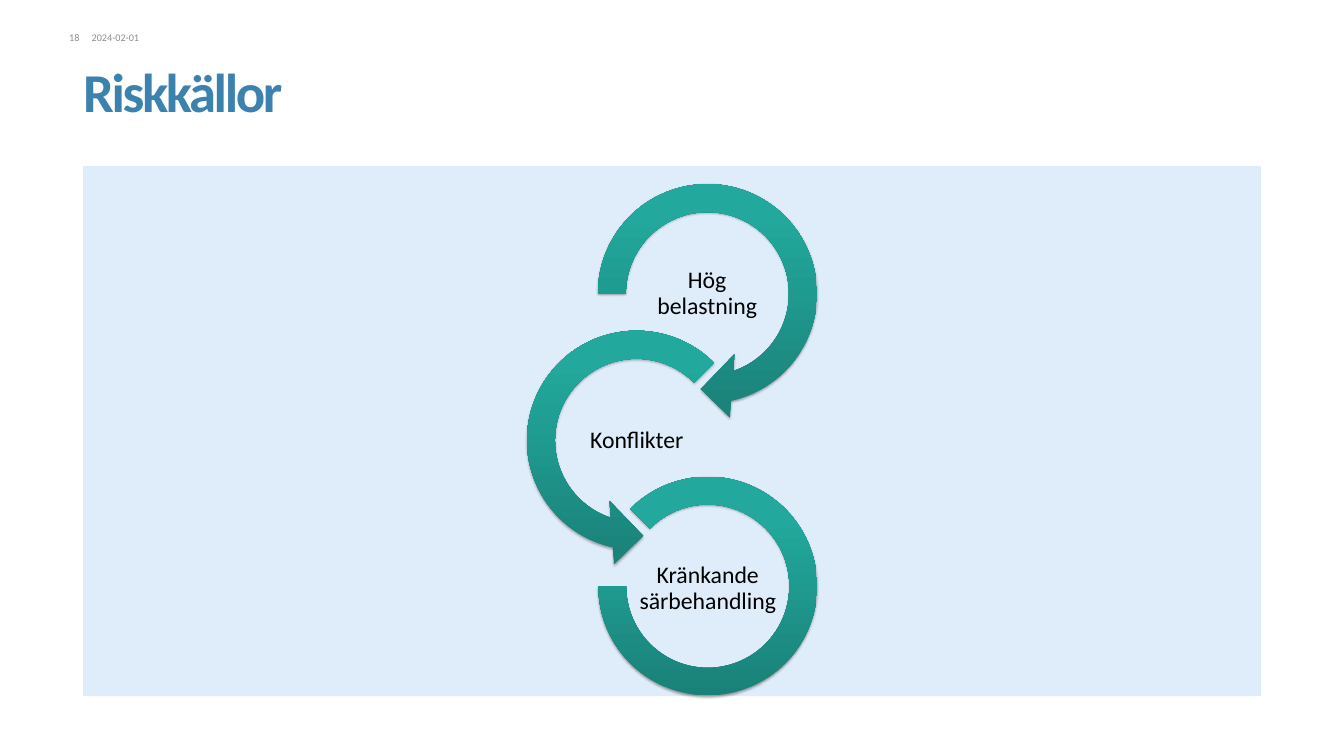
import copy
from dataclasses import dataclass

import pptx
import pptx.dml.color
import pptx.enum.shapes
import pptx.enum.text
import pptx.oxml
import pptx.oxml.ns
import pptx.util
from pptx.util import Inches

SHAPE = pptx.enum.shapes.MSO_SHAPE
ALIGN = pptx.enum.text.PP_ALIGN
ANCHOR = pptx.enum.text.MSO_ANCHOR
FONT = "Calibri"
GREY = "8C8C8C"
GRADIENT = ((0, "1A8178"), (0.8, "22A89C"), (1, "20AB9F"))
SHADOW_XML = (
    f'<a:outerShdw {pptx.oxml.ns.nsdecls("a")} blurRad="39370" dist="22860" '
    'dir="5400000" rotWithShape="0"><a:srgbClr val="000000">'
    '<a:alpha val="35000"/></a:srgbClr></a:outerShdw>'
)


@dataclass
class RiskSource:
    label: str
    label_left: float
    label_top: float
    preset: SHAPE
    left: float
    top: float
    size: float
    adjustments: tuple[float, ...]


RISK_SOURCES = (
    RiskSource("Hög belastning", 10.41, 4.23, SHAPE.CIRCULAR_ARROW,
               9.49, 2.72, 4.17, (0.11, 11.423, 45, 108, 0.125)),
    RiskSource("Konflikter", 9.26, 6.64, SHAPE.LEFT_CIRCULAR_ARROW,
               8.33, 5.12, 4.17, (0.11, 11.423, 63, 189, 0.125)),
    RiskSource("Kränkande särbehandling", 10.42, 9.06, SHAPE.BLOCK_ARC,
               9.79, 7.8, 3.58, (135, 108, 0.127)),
)


def rgb(value: str) -> pptx.dml.color.RGBColor:
    return pptx.dml.color.RGBColor.from_string(value)


def write_text(shape, text: str, *, size: float, color: str, bold: bool = False,
               align=ALIGN.LEFT, anchor=ANCHOR.TOP, line_spacing: float = 1,
               inset: float = 0, bottom_inset: float = 0) -> None:
    frame = shape.text_frame
    frame.word_wrap = True
    frame.auto_size = pptx.enum.text.MSO_AUTO_SIZE.NONE
    frame.vertical_anchor = anchor
    frame.margin_left = frame.margin_right = frame.margin_top = Inches(inset)
    frame.margin_bottom = Inches(bottom_inset or inset)
    paragraph = frame.paragraphs[0]
    paragraph.alignment = align
    paragraph.line_spacing = line_spacing
    run = paragraph.add_run()
    run.text = text
    run.font.name = FONT
    run.font.size = pptx.util.Pt(size)
    run.font.bold = bold
    run.font.color.rgb = rgb(color)


def add_text(slide, text: str, left: float, top: float, width: float,
             height: float, **text_format) -> None:
    box = slide.shapes.add_textbox(
        Inches(left), Inches(top), Inches(width), Inches(height))
    write_text(box, text, **text_format)


def add_plain_shape(slide, preset: SHAPE, left: float, top: float,
                    width: float, height: float):
    shape = slide.shapes.add_shape(
        preset, Inches(left), Inches(top), Inches(width), Inches(height))
    shape.shadow.inherit = False
    shape.line.fill.background()
    return shape


def add_risk_source(slide, source: RiskSource) -> None:
    shape = add_plain_shape(slide, source.preset, source.left, source.top,
                            source.size, source.size)
    for index, value in enumerate(source.adjustments):
        shape.adjustments[index] = value

    # Three-stop gradient, running upwards
    shape.fill.gradient()
    shape.fill.gradient_angle = 90
    properties = shape.element.spPr
    stop_list = properties.find(".//" + pptx.oxml.ns.qn("a:gsLst"))
    stop_list.append(copy.deepcopy(stop_list[-1]))
    for stop, (position, color) in zip(shape.fill.gradient_stops, GRADIENT):
        stop.position = position
        stop.color.rgb = rgb(color)

    # Soft shadow below
    effects = properties.find(pptx.oxml.ns.qn("a:effectLst"))
    effects.append(pptx.oxml.parse_xml(SHADOW_XML))

    add_text(slide, source.label, source.label_left, source.label_top, 2.32, 1.16,
             size=28, color="000000", align=ALIGN.CENTER, anchor=ANCHOR.MIDDLE,
             line_spacing=0.9, inset=0.02)


def main() -> None:
    presentation = pptx.Presentation()
    presentation.slide_width = Inches(21.99)
    presentation.slide_height = Inches(12.37)
    slide = presentation.slides.add_slide(presentation.slide_layouts[5])

    # Panel behind the diagram
    panel = add_plain_shape(slide, SHAPE.RECTANGLE, 1.36, 2.72, 19.27, 8.67)
    panel.fill.solid()
    panel.fill.fore_color.rgb = rgb("DFECF9")

    # Date and page number
    add_text(slide, "2024-02-01", 1.5, 0.52, 0.87, 0.2, size=12, color=GREY)
    add_text(slide, "18", 0.91, 0.52, 0.39, 0.2, size=12, color=GREY,
             align=ALIGN.RIGHT)

    # Title
    title = slide.shapes.title
    title.left, title.top = Inches(1.36), Inches(0.96)
    title.width, title.height = Inches(19.27), Inches(1.14)
    write_text(title, "Riskkällor", size=64.5, color="3C82AF", bold=True,
               anchor=ANCHOR.BOTTOM, line_spacing=0.85, bottom_inset=0.08)
    title_run = title.text_frame.paragraphs[0].runs[0]
    title_run.font._element.set("spc", "-280")

    # Chain of risk sources
    for source in RISK_SOURCES:
        add_risk_source(slide, source)

    presentation.save("out.pptx")


if __name__ == "__main__":
    main()
